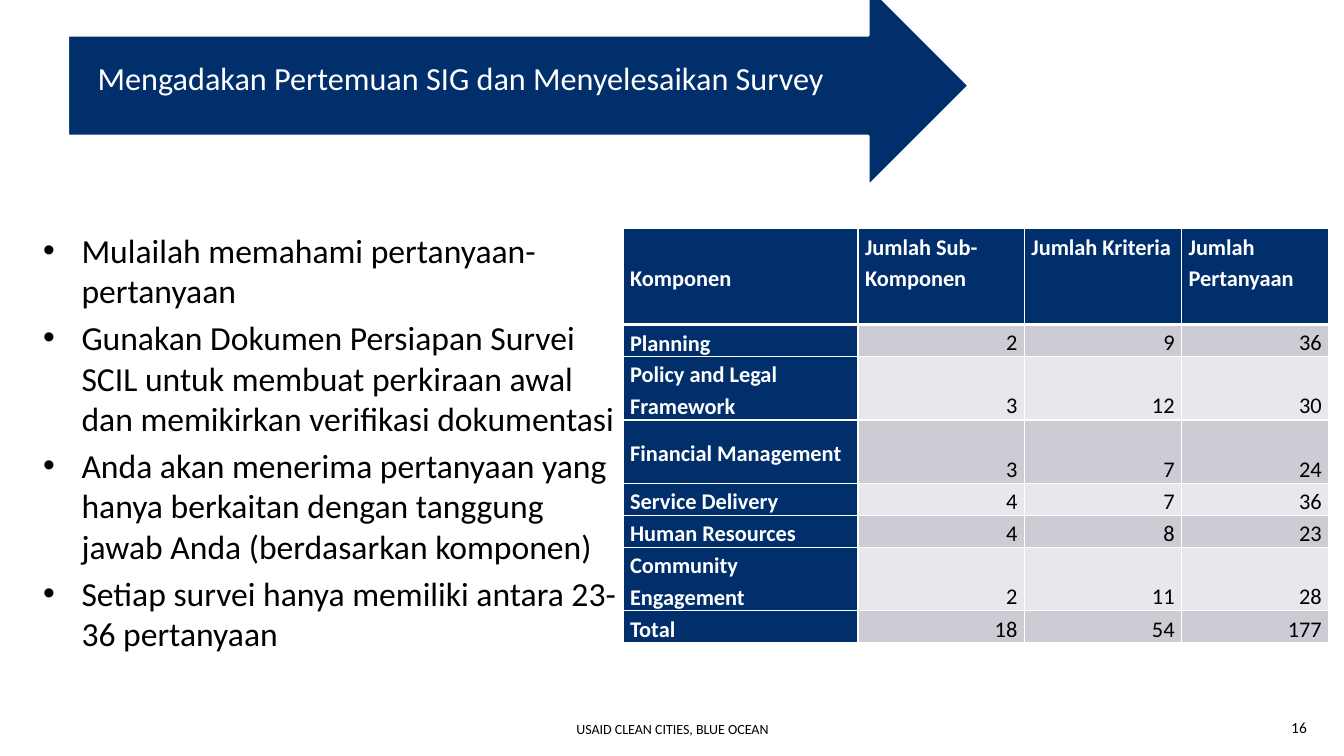
from copy import deepcopy
from dataclasses import dataclass

from lxml import etree
from pptx import Presentation
from pptx.dml.color import RGBColor
from pptx.enum.shapes import MSO_SHAPE
from pptx.enum.text import MSO_ANCHOR, PP_ALIGN
from pptx.oxml.ns import qn
from pptx.util import Inches, Pt

LEFT, CENTER, RIGHT = PP_ALIGN.LEFT, PP_ALIGN.CENTER, PP_ALIGN.RIGHT
TOP, MIDDLE, BOTTOM = MSO_ANCHOR.TOP, MSO_ANCHOR.MIDDLE, MSO_ANCHOR.BOTTOM
RIGHT_ARROW = MSO_SHAPE.RIGHT_ARROW
WIDTH, HEIGHT = Inches(13.33), Inches(7.5)


@dataclass(frozen=True)
class Theme:
    font: str = "Calibri"
    navy: str = "002F6C"
    white: str = "FFFFFF"
    black: str = "000000"
    bands: tuple = ("CCCDD4", "E7E8EB")
    title: int = 23
    body: int = 24
    table: int = 16
    footer: int = 10
    number: int = 11


THEME = Theme()

TITLE = "Mengadakan Pertemuan SIG dan Menyelesaikan Survey"
BULLETS = [
    "Mulailah memahami pertanyaan-pertanyaan",
    "Gunakan Dokumen Persiapan Survei SCIL untuk membuat perkiraan awal "
    "dan memikirkan verifikasi dokumentasi",
    "Anda akan menerima pertanyaan yang hanya berkaitan dengan tanggung "
    "jawab Anda (berdasarkan komponen)",
    "Setiap survei hanya memiliki antara 23-36 pertanyaan",
]
ROWS = [
    ("Komponen", "Jumlah Sub-Komponen", "Jumlah Kriteria", "Jumlah Pertanyaan"),
    ("Planning", 2, 9, 36),
    ("Policy and Legal Framework", 3, 12, 30),
    ("Financial Management", 3, 7, 24),
    ("Service Delivery", 4, 7, 36),
    ("Human Resources", 4, 8, 23),
    ("Community\vEngagement", 2, 11, 28),
    ("Total", 18, 54, 177),
]
COLUMN_SHARES = [17.48, 12.38, 11.7, 10.95]
HEAD_ROW, LINE_ROW = 12.67, 4.2
ROW_SHARES = [HEAD_ROW] + [LINE_ROW * n for n in (1, 2, 2, 1, 1, 2, 1)]


def across(share):
    return int(WIDTH * share / 100)


def down(share):
    return int(HEIGHT * share / 100)


def box(left, top, width, height):
    return across(left), down(top), across(width), down(height)


def apply(target, formats):
    for name, value in formats.items():
        setattr(target, name, value)


def write(p, text, size, color, bold=False, **formats):
    p.text = text
    apply(p, formats)
    for r in p.runs:
        apply(r.font, {"name": THEME.font, "size": Pt(size), "bold": bold})
        r.font.color.rgb = RGBColor.from_string(color)
    for br in p._p.findall(qn("a:br")):
        br.append(deepcopy(p.runs[0]._r.rPr))


def add_text(s, place, texts, size, color, frame=None, bullet=False, gap=0, **formats):
    tf = s.shapes.add_textbox(*box(*place)).text_frame
    apply(tf, {"word_wrap": True, **(frame or {})})
    for i, text in enumerate(texts):
        p = tf.add_paragraph() if i else tf.paragraphs[0]
        if bullet:
            add_bullet(p)
        write(p, text, size, color, space_before=Pt(gap if i else 0), **formats)


def add_bullet(p):
    pPr = p._p.get_or_add_pPr()
    indent = Inches(0.38)
    pPr.set("marL", str(indent))
    pPr.set("indent", str(-indent))
    etree.SubElement(pPr, qn("a:buFont")).set("typeface", "Arial")
    etree.SubElement(pPr, qn("a:buChar")).set("char", "•")


def add_arrow(s, place):
    sp = s.shapes.add_shape(RIGHT_ARROW, *box(*place))
    sp.shadow.inherit = False
    sp.fill.solid()
    sp.fill.fore_color.rgb = RGBColor.from_string(THEME.navy)
    sp.line.color.rgb = RGBColor.from_string(THEME.white)
    sp.line.width = Pt(2)


def add_borders(cell, widths):
    tcPr = cell._tc.get_or_add_tcPr()
    for side, width in zip("LRTB", widths):
        ln = etree.SubElement(tcPr, qn(f"a:ln{side}"), w=str(Pt(width)))
        fill = etree.SubElement(ln, qn("a:solidFill"))
        etree.SubElement(fill, qn("a:srgbClr"), val=THEME.white)


def fill_cell(cell, row, column, value):
    head, label = row == 0, column == 0
    strong = head or label
    add_borders(cell, (1, 1, 3 if row == 1 else 1, 3 if head else 1))
    cell.fill.solid()
    color = THEME.navy if strong else THEME.bands[(row - 1) % 2]
    cell.fill.fore_color.rgb = RGBColor.from_string(color)
    apply(cell, {
        "margin_left": Inches(0.07), "margin_right": Inches(0.07),
        "margin_top": Inches(0.01), "margin_bottom": 0,
        "vertical_anchor": MIDDLE if label else TOP if head else BOTTOM,
    })
    write(cell.text_frame.paragraphs[0], str(value), THEME.table,
          THEME.white if strong else THEME.black, bold=strong,
          alignment=LEFT if strong else RIGHT, line_spacing=1.15, space_after=Pt(6))


def add_grid(s, left, top):
    place = box(left, top, sum(COLUMN_SHARES), sum(ROW_SHARES))
    table = s.shapes.add_table(len(ROWS), len(COLUMN_SHARES), *place).table
    for column, share in zip(table.columns, COLUMN_SHARES):
        column.width = across(share)
    for row, share in zip(table.rows, ROW_SHARES):
        row.height = down(share)
    for i, values in enumerate(ROWS):
        for j, value in enumerate(values):
            fill_cell(table.cell(i, j), i, j, value)


def main():
    prs = Presentation()
    prs.slide_width, prs.slide_height = WIDTH, HEIGHT
    s = prs.slides.add_slide(prs.slide_layouts[6])
    add_text(s, (13.95, 94.67, 72.17, 3.73), ["USAID CLEAN CITIES, BLUE OCEAN"],
             THEME.footer, THEME.black, alignment=CENTER)
    add_text(s, (80.5, 94.27, 17.48, 3.87), ["16"],
             THEME.number, THEME.black, alignment=RIGHT)
    add_grid(s, 46.36, 30.27)
    add_text(s, (2.48, 29.73, 44.19, 67.73), BULLETS,
             THEME.body, THEME.black, bullet=True, gap=4.8)
    add_arrow(s, (5.03, -2, 67.07, 26.67))
    title_frame = {
        "vertical_anchor": MIDDLE, "margin_left": Inches(0.1), "margin_top": Inches(0.1),
        "margin_right": Inches(0.28), "margin_bottom": Inches(0.21),
    }
    add_text(s, (6.53, 4.67, 63.32, 13.33), [TITLE], THEME.title, THEME.white,
             frame=title_frame, line_spacing=0.9)
    prs.save("out.pptx")


if __name__ == "__main__":
    main()
